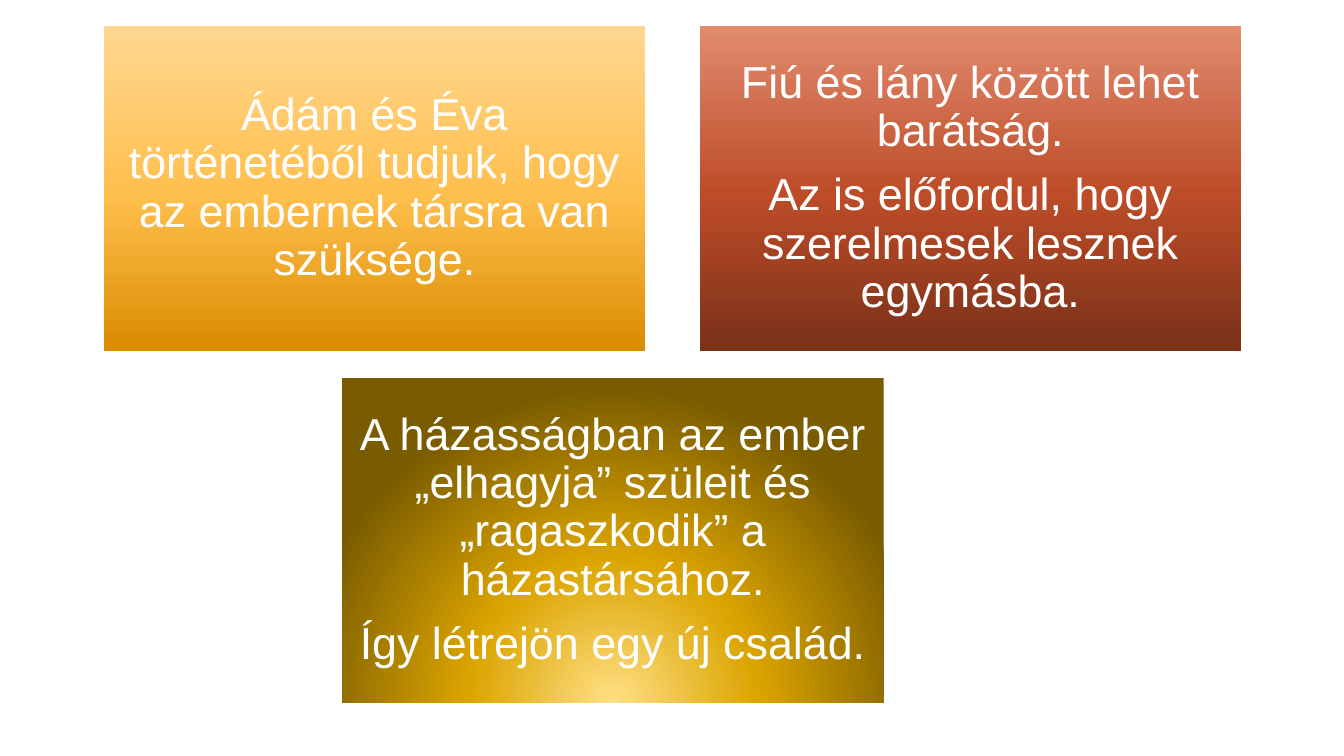
from lxml.etree import SubElement
from pptx import Presentation
from pptx.dml.color import RGBColor
from pptx.enum.shapes import MSO_SHAPE
from pptx.enum.text import MSO_ANCHOR, PP_ALIGN
from pptx.oxml.ns import qn
from pptx.util import Inches, Pt

# Card grid, in inches
CARD_W, CARD_H = 5.37, 3.22
COLUMN_STEP, ROW_STEP = CARD_W + 0.54, CARD_H + 0.27
GRID_LEFT, GRID_TOP = 1.03, 0.26
INSET = 0.13
FONT_SIZE = 32

# Column, row, gradient stops, radial focus (or None) and paragraphs
CARDS = [
    (0, 0, [(0, "DA8C00"), (48, "FFBF4D"), (100, "FFD791")], None,
     ["Ádám és Éva történetéből tudjuk, hogy az embernek társra van szüksége."]),
    (1, 0, [(0, "7A3119"), (48, "BD4C28"), (100, "E18B6F")], None,
     ["Fiú és lány között lehet barátság.",
      "Az is előfordul, hogy szerelmesek lesznek egymásba."]),
    (0.4, 1, [(0, "FFE085"), (46, "DBA400"), (100, "7A5C00")],
     {"l": 50, "t": 130, "r": 50, "b": -30},
     ["A házasságban az ember „elhagyja” szüleit és „ragaszkodik” a házastársához.",
      "Így létrejön egy új család."]),
]


def color(hex_code):
    return RGBColor.from_string(hex_code)


def fill_gradient(card, stops, focus):
    """Fill with three stops, upwards or radiating from the focus."""
    card.fill.gradient()
    gradient = card.element.spPr.find(qn("a:gradFill"))
    for child in list(gradient):
        gradient.remove(child)
    stop_list = SubElement(gradient, qn("a:gsLst"))
    for percent, hex_code in stops:
        stop = SubElement(stop_list, qn("a:gs"), pos=str(percent * 1000))
        SubElement(stop, qn("a:srgbClr"), val=hex_code)
    if focus:
        radial = SubElement(gradient, qn("a:path"), {"path": "circle"})
        edges = {side: str(share * 1000) for side, share in focus.items()}
        SubElement(radial, qn("a:fillToRect"), edges)
    else:
        SubElement(gradient, qn("a:lin"), ang=str(270 * 60000), scaled="0")


def write_message(card, messages):
    frame = card.text_frame
    frame.word_wrap = True
    frame.vertical_anchor = MSO_ANCHOR.MIDDLE
    frame.margin_left = frame.margin_right = Inches(INSET)
    frame.margin_top = frame.margin_bottom = Inches(INSET)
    for index, message in enumerate(messages):
        paragraph = frame.add_paragraph() if index else frame.paragraphs[0]
        paragraph.alignment = PP_ALIGN.CENTER
        paragraph.line_spacing = 0.9
        paragraph.space_after = Pt(0.35 * FONT_SIZE)
        run = paragraph.add_run()
        run.text = message
        run.font.name = "Arial"
        run.font.size = Pt(FONT_SIZE)
        run.font.color.rgb = color("FFFFFF")


def add_card(group, column, row, stops, focus, messages):
    card = group.shapes.add_shape(
        MSO_SHAPE.RECTANGLE,
        Inches(GRID_LEFT + column * COLUMN_STEP),
        Inches(GRID_TOP + row * ROW_STEP),
        Inches(CARD_W), Inches(CARD_H))
    card.shadow.inherit = False
    card.line.fill.background()
    fill_gradient(card, stops, focus)
    write_message(card, messages)


def main():
    deck = Presentation()
    deck.slide_width, deck.slide_height = Inches(13.33), Inches(7.5)
    slide = deck.slides.add_slide(deck.slide_layouts[6])

    # Three message cards, grouped
    group = slide.shapes.add_group_shape()
    for card in CARDS:
        add_card(group, *card)

    deck.save("out.pptx")


if __name__ == "__main__":
    main()
